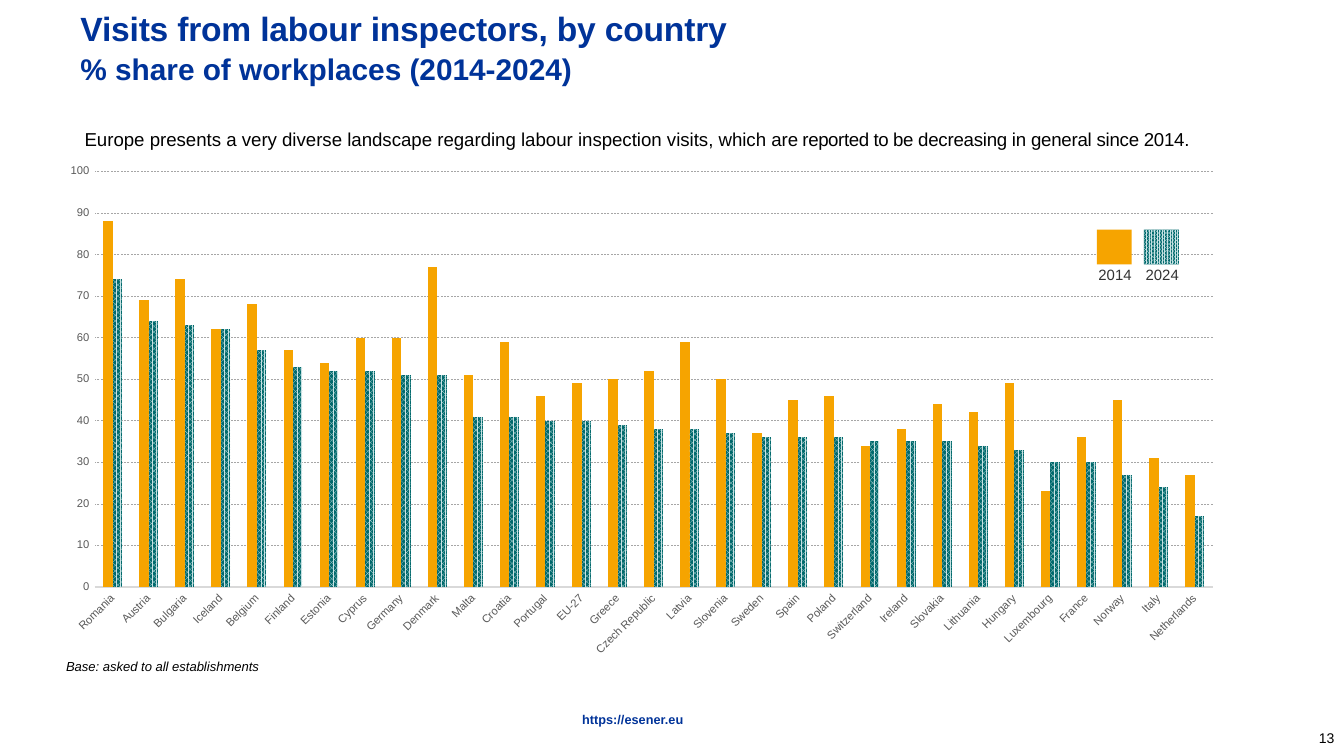
from lxml import etree
from pptx import Presentation
from pptx.chart import data as cd
from pptx.dml import color as col
from pptx.enum import chart as ch, dml, shapes, text
from pptx.oxml import ns
from pptx.util import Cm, Pt

HUES = {"blue": "003399", "gold": "F6A400", "teal": "00696C", "pale": "C7E2E3",
        "black": "000000", "dark": "333333", "label": "595959",
        "axis": "D9D9D9", "grid": "A6A6A6"}

VISITS = [
    ("Romania", 88, 74), ("Austria", 69, 64), ("Bulgaria", 74, 63),
    ("Iceland", 62, 62), ("Belgium", 68, 57), ("Finland", 57, 53),
    ("Estonia", 54, 52), ("Cyprus", 60, 52), ("Germany", 60, 51),
    ("Denmark", 77, 51), ("Malta", 51, 41), ("Croatia", 59, 41),
    ("Portugal", 46, 40), ("EU-27", 49, 40), ("Greece", 50, 39),
    ("Czech Republic", 52, 38), ("Latvia", 59, 38), ("Slovenia", 50, 37),
    ("Sweden", 37, 36), ("Spain", 45, 36), ("Poland", 46, 36),
    ("Switzerland", 34, 35), ("Ireland", 38, 35), ("Slovakia", 44, 35),
    ("Lithuania", 42, 34), ("Hungary", 49, 33), ("Luxembourg", 23, 30),
    ("France", 36, 30), ("Norway", 45, 27), ("Italy", 31, 24),
    ("Netherlands", 27, 17)]


def hue(name):
    return col.RGBColor.from_string(HUES[name])


class Deck:
    font = "Arial"

    def __init__(self, wide, high):
        self.prs = Presentation()
        self.prs.slide_width, self.prs.slide_height = Cm(wide), Cm(high)
        self.slide = self.prs.slides.add_slide(self.prs.slide_layouts[5])

    def style(self, font, size, name, bold=False, italic=False):
        font.name, font.size = self.font, Pt(size)
        font.bold, font.italic = bold, italic
        font.color.rgb = hue(name)

    def space(self, run, points):
        run.font._element.set("spc", str(round(points * 100)))

    def title(self, lines, sizes, box):
        shape = self.slide.shapes.title
        shape.left, shape.top, shape.width, shape.height = map(Cm, box)
        frame = shape.text_frame
        frame.text = "\n".join(lines)
        frame.auto_size = text.MSO_AUTO_SIZE.NONE
        frame.word_wrap = True
        frame.vertical_anchor = text.MSO_ANCHOR.MIDDLE
        frame.margin_left = Cm(0.28)
        for n, (para, size) in enumerate(zip(frame.paragraphs, sizes)):
            para.alignment = text.PP_ALIGN.LEFT
            para.space_before = Pt(n)
            for run in para.runs:
                self.style(run.font, size, "blue", bold=True)
        self.space(frame.paragraphs[0].runs[0], -0.1)

    def note(self, words, box, size, name="black", align="LEFT", pad=(0.03, 0.03, 0, 0),
             anchor="TOP", **look):
        """Add a text box; words is a string or a list of (text, spacing)."""
        frame = self.slide.shapes.add_textbox(*map(Cm, box)).text_frame
        frame.word_wrap = True
        frame.vertical_anchor = text.MSO_ANCHOR[anchor]
        (frame.margin_left, frame.margin_top,
         frame.margin_right, frame.margin_bottom) = map(Cm, pad)
        para = frame.paragraphs[0]
        para.alignment = text.PP_ALIGN[align]
        for part, gap in [(words, 0)] if isinstance(words, str) else words:
            run = para.add_run()
            run.text = part
            self.style(run.font, size, name, **look)
            if gap:
                self.space(run, gap)
        return para

    def paint(self, fill, pattern=None):
        if pattern is None:
            fill.solid()
            fill.fore_color.rgb = hue("gold")
        else:
            fill.patterned()
            fill.pattern = pattern
            fill.fore_color.rgb, fill.back_color.rgb = hue("pale"), hue("teal")

    def key(self, year, left, top, pattern=None):
        side = 0.66
        mark = self.slide.shapes.add_shape(
            shapes.MSO_SHAPE.RECTANGLE, Cm(left), Cm(top), Cm(side), Cm(side))
        mark.shadow.inherit = False
        mark.line.fill.background()
        self.paint(mark.fill, pattern)
        self.note(year, (left, top + side, 0.69, 0.38), 8, "dark")

    def bars(self, rows, box, plot):
        names, old, new = zip(*rows)
        data = cd.CategoryChartData()
        data.categories = names
        data.add_series("2014", old)
        data.add_series("2024", new)
        chart = self.slide.shapes.add_chart(
            ch.XL_CHART_TYPE.COLUMN_CLUSTERED, *map(Cm, box), data).chart
        chart.has_legend = chart.has_title = False
        self.style(chart.font, 6, "black")
        group = chart.plots[0]
        group.gap_width, group.overlap = 182, 0
        group.vary_by_categories = False
        for series, pattern in zip(group.series, (None, dml.MSO_PATTERN.PERCENT_80)):
            series.invert_if_negative = False
            self.paint(series.format.fill, pattern)

        # Axes
        for axis in (chart.category_axis, chart.value_axis):
            axis.major_tick_mark = axis.minor_tick_mark = ch.XL_TICK_MARK.NONE
            self.style(axis.tick_labels.font, 6, "label")
        line = chart.category_axis.format.line
        line.color.rgb, line.width = hue("axis"), Pt(0.75)
        chart.category_axis.tick_labels.font._element.getparent().getparent() \
            .getparent().find(ns.qn("a:bodyPr")).set("rot", "-2700000")
        axis = chart.value_axis
        axis.minimum_scale, axis.maximum_scale, axis.major_unit = 0, 100, 10
        axis.format.line.fill.background()
        grid = axis.major_gridlines.format.line
        grid.color.rgb, grid.width = hue("grid"), Pt(0.25)
        grid.dash_style = dml.MSO_LINE.DASH

        # Fixed plot area
        area = chart._chartSpace.chart.plotArea
        for old_one in area.findall(ns.qn("c:layout")):
            area.remove(old_one)
        layout = etree.Element(ns.qn("c:layout"))
        area.insert(0, layout)
        manual = etree.SubElement(layout, ns.qn("c:manualLayout"))
        pairs = [("layoutTarget", "inner"), ("xMode", "edge"), ("yMode", "edge")]
        for tag, val in pairs + list(zip("xywh", plot)):
            etree.SubElement(manual, ns.qn("c:" + tag)).set("val", str(val))


def main():
    deck = Deck(25.4, 14.29)

    # Heading
    deck.title(["Visits from labour inspectors, by country",
                "% share of workplaces (2014-2024)"],
               (18, 16), (1.24, 0.38, 22.45, 1.02))

    # Chart
    deck.bars(VISITS, (0.89, 2.95, 22.48, 9.7), (0.04, 0.03, 0.94, 0.81))

    # Lead sentence
    deck.note([("Europe presents a very diverse landscape regarding labour "
                "inspection visits, which are", 0),
               (" reported to be ", -0.2),
               ("decreasing in general since 2014.", -0.1)],
              (1.57, 2.39, 21.51, 0.46), 10)

    # Legend
    deck.key("2014", 20.73, 4.34)
    deck.key("2024", 21.62, 4.34, dml.MSO_PATTERN.PERCENT_90)

    # Footer
    deck.note("Base: asked to all establishments",
              (1.22, 12.42, 10.31, 0.33), 7, italic=True)
    link = deck.note("https://esener.eu", (3.86, 13.49, 16.2, 0.23), 6.8, "blue",
                     "CENTER", (0, 0, 0, 0), bold=True)
    link.line_spacing = 0.9
    deck.note("13", (23.7, 13.56, 1.7, 0.76), 7.5, align="RIGHT",
              pad=(0.18, 0.1, 0.18, 0.1), anchor="MIDDLE")

    deck.prs.save("out.pptx")


if __name__ == "__main__":
    main()
